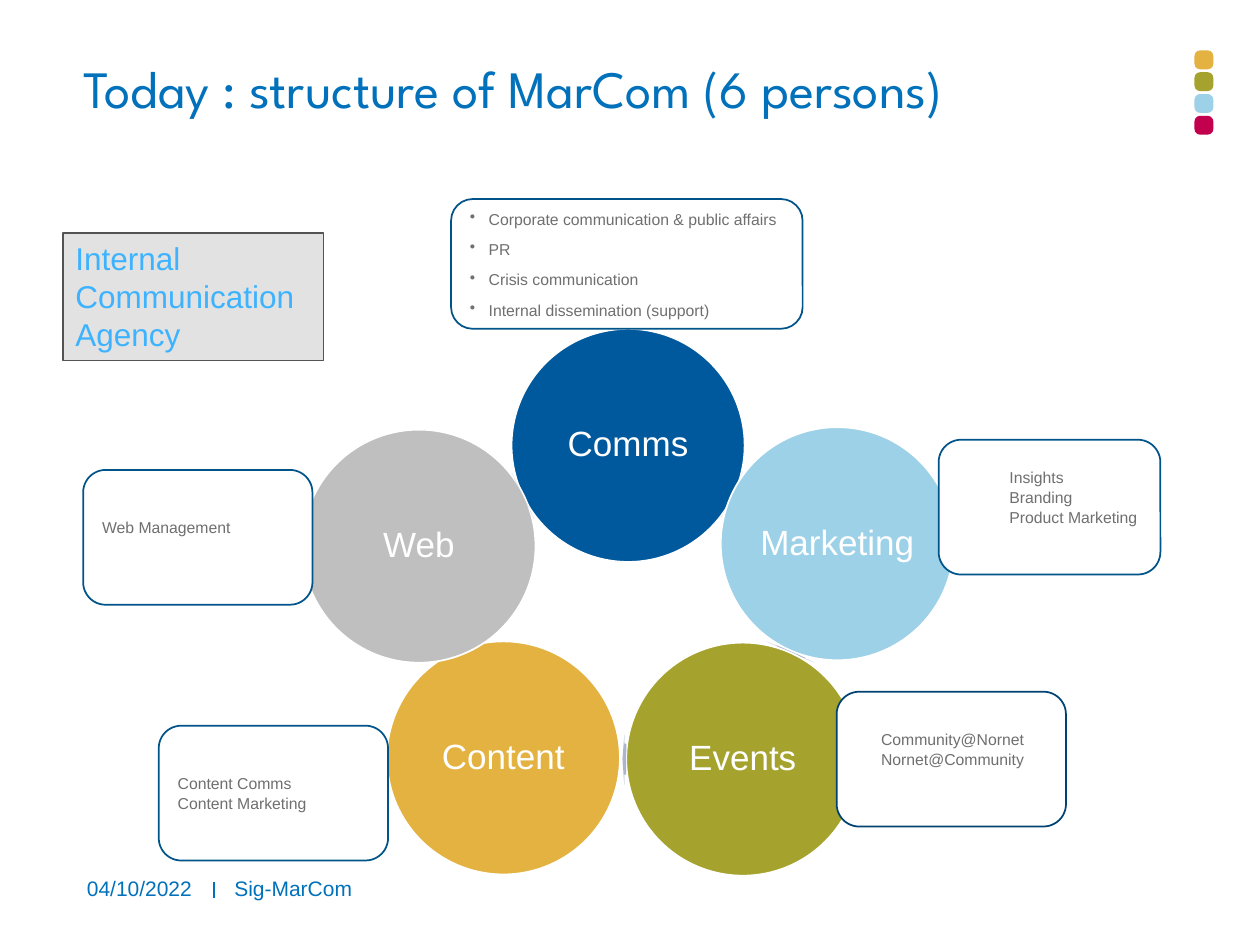
from lxml import etree
from pptx import Presentation
from pptx.dml.color import RGBColor
from pptx.enum import shapes, text
from pptx.oxml import ns
from pptx.util import Inches, Pt

BLUE, NAVY, GREY, WHITE = "0071BA", "00548A", "706F6F", "FFFFFF"
GOLD, OLIVE, SKY, RED = "E3B240", "A5A32E", "9DD1E7", "C3004D"
DIAMETER = 1.85
KIND = shapes.MSO_SHAPE

# name, left, top, fill, then left, top, height and rotation of the arrow
CIRCLES = [
    ("Comms", 4.06, 2.61, "00599C", (5.81, 3.72, 0, 205.3)),
    ("Marketing", 5.72, 3.39, SKY, (6.27, 4.97, 0.01, 113.6)),
    ("Events", 4.97, 5.1, OLIVE, (4.94, 5.82, 0.03, 180.1)),
    ("Content", 3.07, 5.09, GOLD, (3.65, 4.97, 0.02, 68)),
    ("Web", 2.4, 3.41, "BFBFBF", (4.15, 3.73, 0, 154)),
]

# lines, box, left inset, bottom inset, outline
TASKS = [
    (["Web Management"], (0.66, 3.73, 1.82, 1.07), 0.1, 0.21, NAVY),
    (["Insights", "Branding", "Product Marketing"],
     (7.45, 3.49, 1.76, 1.07), 0.51, 0.21, NAVY),
    (["Content Comms", "Content Marketing"],
     (1.26, 5.76, 1.82, 1.07), 0.1, 0.05, NAVY),
    (["Community@Nornet", "Nornet@Community"],
     (6.64, 5.49, 1.82, 1.07), 0.3, 0.21, "004273"),
]


def color(value):
    """Turn a hex string into a colour."""
    return RGBColor.from_string(value)


def add_shape(slide, kind, box, fill, line=None, width=1):
    """Add a flat preset shape."""
    shape = slide.shapes.add_shape(kind, *map(Inches, box))
    shape.shadow.inherit = False
    shape.fill.solid()
    shape.fill.fore_color.rgb = color(fill)
    if line:
        shape.line.color.rgb = color(line)
        shape.line.width = Pt(width)
    else:
        shape.line.fill.background()
    return shape


def set_text(shape, lines, size, fill, font="Arial", spacing=1.0,
             align=text.PP_ALIGN.LEFT, anchor=text.MSO_ANCHOR.TOP):
    """Write one paragraph per line and format its runs."""
    frame = shape.text_frame
    frame.text = "\n".join(lines)
    frame.word_wrap = True
    frame.vertical_anchor = anchor
    for paragraph in frame.paragraphs:
        paragraph.alignment = align
        paragraph.line_spacing = spacing
        for run in paragraph.runs:
            run.font.size = Pt(size)
            run.font.name = font
            run.font.color.rgb = color(fill)


def set_insets(shape, left, top, right, bottom):
    """Set the four text margins in inches."""
    frame = shape.text_frame
    frame.margin_left, frame.margin_top = Inches(left), Inches(top)
    frame.margin_right, frame.margin_bottom = Inches(right), Inches(bottom)


def add_title(slide, title):
    """Place and format the title."""
    shape = slide.shapes.title
    shape.left, shape.top = Inches(0.66), Inches(0.5)
    shape.width, shape.height = Inches(8.62), Inches(1.02)
    set_insets(shape, 0, 0, 0, 0)
    set_text(shape, [title], 30, BLUE, "League Spartan", 0.9)
    shape.text_frame.auto_size = text.MSO_AUTO_SIZE.NONE


def add_circle(slide, name, left, top, fill, arrow):
    """Add a team circle and the arrow to the next one."""
    circle = add_shape(slide, KIND.OVAL, (left, top, DIAMETER, DIAMETER), fill, WHITE)
    set_insets(circle, 0.03, 0.03, 0.03, 0.03)
    set_text(circle, [name], 20, WHITE, spacing=0.9,
             align=text.PP_ALIGN.CENTER, anchor=text.MSO_ANCHOR.MIDDLE)
    x, y, width, rotation = arrow
    pointer = add_shape(slide, KIND.RIGHT_ARROW, (x, y, width, 0.41), "ABB5CB")
    pointer.adjustments[0] = 0.6
    pointer.rotation = rotation


def add_task_box(slide, lines, box, left, bottom, line):
    """Add a rounded box that lists tasks."""
    shape = add_shape(slide, KIND.ROUNDED_RECTANGLE, box, WHITE, line)
    set_insets(shape, left, 0.05, 0.05, bottom)
    set_text(shape, lines, 9, GREY, spacing=1.05, anchor=text.MSO_ANCHOR.MIDDLE)
    return shape


def add_bullets(shape):
    """Give each paragraph a hanging bullet and space between items."""
    for index, paragraph in enumerate(shape.text_frame.paragraphs):
        paragraph.space_before = Pt(6 if index else 0)
        properties = paragraph._p.get_or_add_pPr()
        properties.set("marL", str(Inches(0.15)))
        properties.set("indent", str(-Inches(0.15)))
        bullet = etree.SubElement(properties, ns.qn("a:buChar"))
        bullet.set("char", "•")


def set_opacity(shape, percent):
    """Make a solid fill partly transparent."""
    fill = shape._element.spPr.find(ns.qn("a:solidFill"))
    alpha = etree.SubElement(fill[0], ns.qn("a:alpha"))
    alpha.set("val", str(percent * 1000))


def add_footer_text(slide, left, width, words):
    """Add one footer item."""
    shape = slide.shapes.add_textbox(*map(Inches, (left, 6.95, width, 0.28)))
    set_insets(shape, 0, 0, 0, 0)
    set_text(shape, [words], 12, BLUE)


def add_footer_rule(slide):
    """Add the short rule between the footer items."""
    rule = slide.shapes.add_connector(
        shapes.MSO_CONNECTOR.STRAIGHT, *map(Inches, (1.7, 7, 1.7, 7.13)))
    rule.line.color.rgb = color(BLUE)
    rule.line.width = Pt(1)
    etree.SubElement(rule._element.spPr, ns.qn("a:effectLst"))


def main():
    """Build and save the slide."""
    presentation = Presentation()
    presentation.slide_width, presentation.slide_height = Inches(10), Inches(7.5)
    slide = presentation.slides.add_slide(presentation.slide_layouts[5])
    add_title(slide, "Today : structure of MarCom (6 persons)")
    for index, fill in enumerate([GOLD, OLIVE, SKY, RED]):
        dot = add_shape(slide, KIND.ROUNDED_RECTANGLE,
                        (9.48, 0.4 + index * 0.173, 0.15, 0.15), fill)
        dot.adjustments[0] = 0.3
    add_footer_rule(slide)
    for circle in CIRCLES:
        add_circle(slide, *circle)
    comms = add_task_box(
        slide,
        ["Corporate communication & public affairs", "PR",
         "Crisis communication", "Internal dissemination (support)"],
        (3.58, 1.58, 2.79, 1.03), 0.1, 0.05, NAVY)
    add_bullets(comms)
    set_opacity(comms, 98)
    for task in TASKS:
        add_task_box(slide, *task)
    agency = add_shape(slide, KIND.RECTANGLE, (0.5, 1.85, 2.07, 1.01),
                       "E2E2E2", "545353", 0.75)
    set_text(agency, ["Internal Communication Agency"], 18, "3DB3FF")
    add_footer_text(slide, 0.69, 0.94, "04/10/2022")
    add_footer_text(slide, 1.86, 3.38, "Sig-MarCom")
    presentation.save("out.pptx")


if __name__ == "__main__":
    main()
